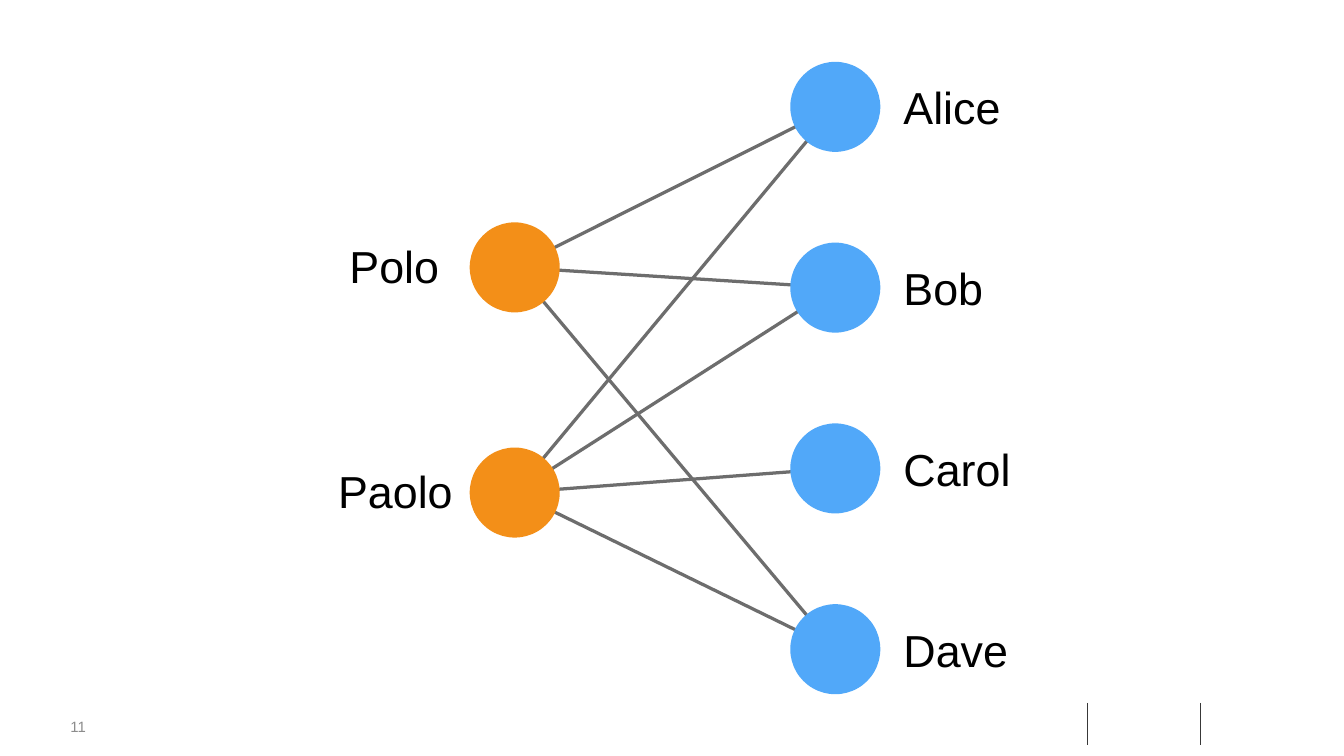
import pptx
import pptx.util
import pptx.dml.color
import pptx.enum.shapes
import pptx.enum.text
from lxml import etree

Pt = pptx.util.Pt
RGB = pptx.dml.color.RGBColor
Align = pptx.enum.text.PP_ALIGN

ORANGE = RGB(0xF3, 0x8F, 0x18)
BLUE = RGB(0x51, 0xA8, 0xF9)
GREY = RGB(0x6D, 0x6D, 0x6D)
DARK = RGB(0x38, 0x38, 0x38)
PALE = RGB(0x8C, 0x8C, 0x8C)
BLACK = RGB(0, 0, 0)

NODE = 96.5  # circle diameter
LEFT_X, RIGHT_X = 551.5, 895
LABEL_W, LABEL_H = 253.5, 75

# Name: (centre y, right edge of label)
SENDERS = {"Polo": (286.5, 474.5), "Paolo": (527.75, 489)}
# Name: centre y
PEOPLE = {name: 114.5 + 193.7 * i
          for i, name in enumerate(["Alice", "Bob", "Carol", "Dave"])}
LINKS = {"Polo": ["Alice", "Bob", "Dave"],
         "Paolo": ["Alice", "Bob", "Dave", "Carol"]}


def add_line(slide, start, end, color, width):
    line = slide.shapes.add_connector(
        pptx.enum.shapes.MSO_CONNECTOR.STRAIGHT,
        *[Pt(v) for v in (*start, *end)])
    line.line.color.rgb = color
    line.line.width = Pt(width)
    etree.SubElement(line._element.spPr, pptx.oxml.ns.qn("a:effectLst"))


def add_text(slide, text, box, size, color, align=Align.LEFT, inset=0):
    frame = slide.shapes.add_textbox(*[Pt(v) for v in box]).text_frame
    frame.word_wrap = True
    frame.vertical_anchor = pptx.enum.text.MSO_ANCHOR.MIDDLE
    frame.margin_left = frame.margin_right = Pt(inset)
    frame.margin_top = frame.margin_bottom = Pt(inset)
    para = frame.paragraphs[0]
    para.alignment = align
    run = para.add_run()
    run.text = text
    run.font.name = "Arial"
    run.font.size = Pt(size)
    run.font.color.rgb = color


def add_label(slide, name, left, mid, align):
    box = (left, mid - LABEL_H / 2, LABEL_W, LABEL_H)
    add_text(slide, name, box, 48, BLACK, align, 4)


def add_node(slide, x, y, color):
    node = slide.shapes.add_shape(
        pptx.enum.shapes.MSO_SHAPE.OVAL,
        Pt(x - NODE / 2), Pt(y - NODE / 2), Pt(NODE), Pt(NODE))
    node.shadow.inherit = False
    node.fill.solid()
    node.fill.fore_color.rgb = color
    node.line.fill.background()


def main():
    deck = pptx.Presentation()
    deck.slide_width, deck.slide_height = Pt(1440), Pt(810)
    slide = deck.slides.add_slide(deck.slide_layouts[6])

    # Footer rules and page number
    for x in (1165, 1286):
        add_line(slide, (x, 753), (x, 798.5), DARK, 1)
    add_text(slide, "11", (75.5, 769, 42.5, 19.5), 16, PALE)

    # Links, beneath the nodes
    for name, ends in LINKS.items():
        for end in ends:
            add_line(slide, (LEFT_X, SENDERS[name][0]),
                     (RIGHT_X, PEOPLE[end]), GREY, 3.5)

    # Left side
    for name, (y, edge) in SENDERS.items():
        add_label(slide, name, edge - LABEL_W, y - 2, Align.RIGHT)
        add_node(slide, LEFT_X, y, ORANGE)

    # Right side
    for name, y in PEOPLE.items():
        add_label(slide, name, 964, y, Align.LEFT)
        add_node(slide, RIGHT_X, y, BLUE)

    deck.save("out.pptx")


if __name__ == "__main__":
    main()
